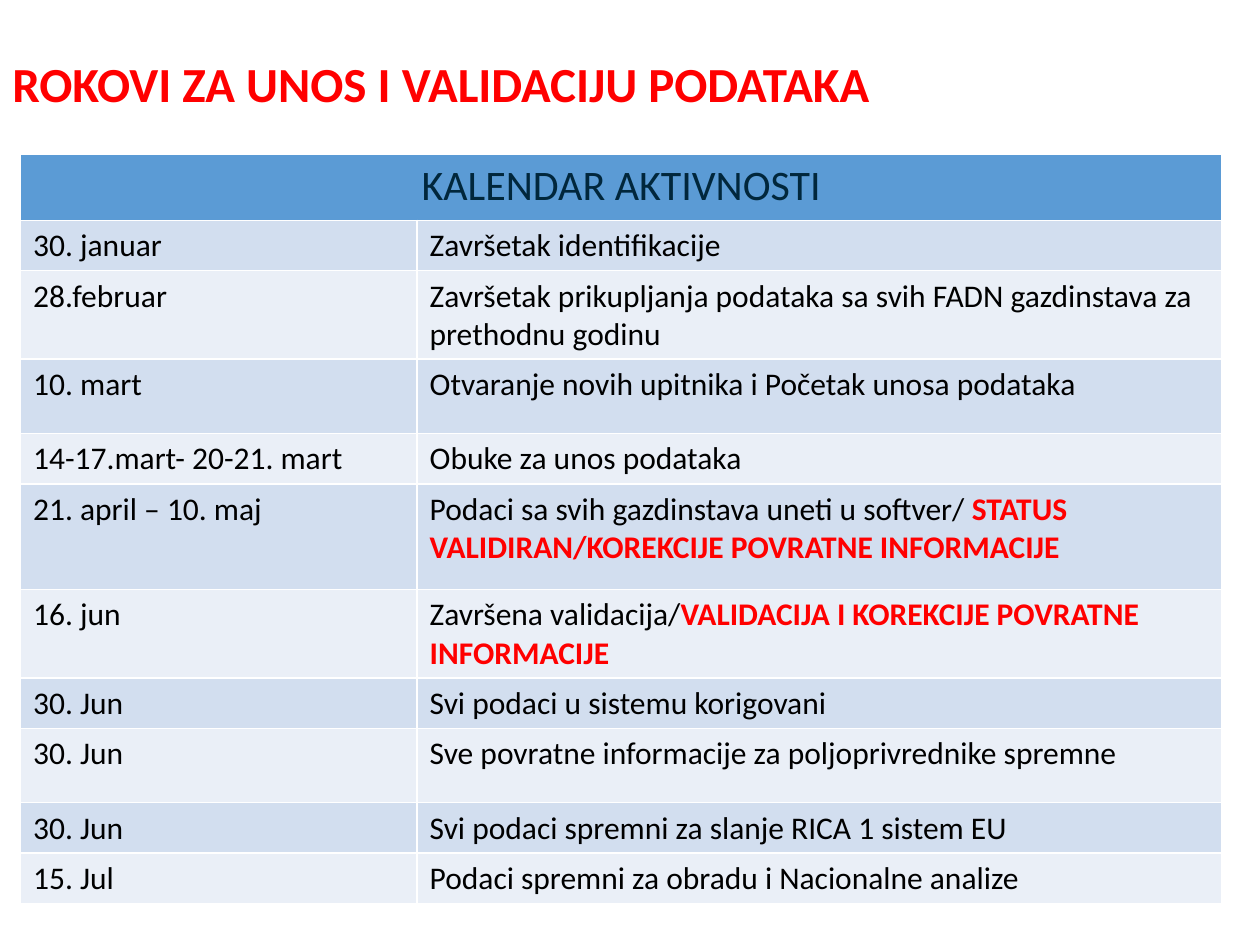
from lxml import etree
from pptx import Presentation
from pptx import util as u
from pptx.dml.color import RGBColor
from pptx.enum import text
from pptx.oxml.ns import qn

RED, BLACK, WHITE = "FF0000", "000000", "FFFFFF"
HEADER_FILL, HEADER_TEXT = "5B9BD5", "01273C"
BANDS = ("D2DEEF", "EAEFF7")

HEADING = "KALENDAR AKTIVNOSTI"
HEADING_HEIGHT = 38
DEADLINES = [
    (24.5, "30. januar", "Završetak identifikacije", ""),
    (42.5, "28.februar",
     "Završetak prikupljanja podataka sa svih FADN gazdinstava za prethodnu godinu", ""),
    (42.5, "10. mart", "Otvaranje novih upitnika i Početak unosa podataka", ""),
    (24.5, "14-17.mart- 20-21. mart", "Obuke za unos podataka", ""),
    (60.5, "21. april – 10. maj", "Podaci sa svih gazdinstava uneti u softver/ ",
     "STATUS VALIDIRAN/KOREKCIJE POVRATNE INFORMACIJE"),
    (42.5, "16. jun", "Završena validacija/", "VALIDACIJA I KOREKCIJE POVRATNE INFORMACIJE"),
    (24.5, "30. Jun", "Svi podaci u sistemu korigovani", ""),
    (42.5, "30. Jun", "Sve povratne informacije za poljoprivrednike spremne", ""),
    (26.5, "30. Jun", "Svi podaci spremni za slanje RICA 1 sistem EU", ""),
    (24.5, "15. Jul", "Podaci spremni za obradu i Nacionalne analize", ""),
]


def color(value):
    return RGBColor.from_string(value)


class CalendarSlide:
    font_name = "Calibri"

    def __init__(self, deck):
        self.slide = deck.slides.add_slide(deck.slide_layouts[6])

    def style(self, font, size, ink, bold=False):
        font.name, font.size, font.bold = self.font_name, u.Pt(size), bold
        font.color.rgb = color(ink)

    def title(self, wording, left, top, width, height):
        frame = self.slide.shapes.add_textbox(*map(u.Pt, (left, top, width, height))).text_frame
        frame.word_wrap = True
        frame.vertical_anchor = text.MSO_ANCHOR.MIDDLE
        heading = frame.paragraphs[0]
        heading.text = wording
        heading.line_spacing = 0.9
        self.style(heading.font, 28, RED, True)

    def table(self, left, top, widths, heights):
        bounds = map(u.Pt, (left, top, sum(widths), sum(heights)))
        grid = self.slide.shapes.add_table(len(heights), len(widths), *bounds).table
        for column, width in zip(grid.columns, widths):
            column.width = u.Pt(width)
        for row, height in zip(grid.rows, heights):
            row.height = u.Pt(height)
        return grid

    def paint(self, cell, fill):
        properties = cell._tc.get_or_add_tcPr()
        for side in ("lnL", "lnR", "lnT", "lnB"):
            line = etree.SubElement(properties, qn(f"a:{side}"), w=str(u.Pt(1)))
            solid = etree.SubElement(line, qn("a:solidFill"))
            etree.SubElement(solid, qn("a:srgbClr"), val=WHITE)
        cell.fill.solid()
        cell.fill.fore_color.rgb = color(fill)

    def cell(self, cell, wording, fill, size=18, ink=BLACK, emphasis=""):
        self.paint(cell, fill)
        entry = cell.text_frame.paragraphs[0]
        entry.text = wording
        if emphasis:
            self.style(entry.runs[0].font, size, ink)
            warning = entry.add_run()
            warning.text = emphasis
            self.style(warning.font, size, RED, True)
        else:
            self.style(entry.font, size, ink)
        return entry


def main():
    deck = Presentation()
    deck.slide_width, deck.slide_height = u.Pt(720), u.Pt(540)
    page = CalendarSlide(deck)
    page.title("ROKOVI ZA UNOS I VALIDACIJU PODATAKA", 0, 17.28, 532, 64.8)

    heights = [HEADING_HEIGHT] + [deadline[0] for deadline in DEADLINES]
    calendar = page.table(11.75, 87.9, (226.6, 459.9), heights)
    calendar.cell(0, 0).merge(calendar.cell(0, 1))
    heading = page.cell(calendar.cell(0, 0), HEADING, HEADER_FILL, 24, HEADER_TEXT)
    heading.alignment = text.PP_ALIGN.CENTER
    page.paint(calendar.cell(0, 1), HEADER_FILL)

    for index, (_, date, activity, emphasis) in enumerate(DEADLINES):
        band = BANDS[index % 2]
        page.cell(calendar.cell(index + 1, 0), date, band)
        page.cell(calendar.cell(index + 1, 1), activity, band, emphasis=emphasis)

    deck.save("out.pptx")


if __name__ == "__main__":
    main()
